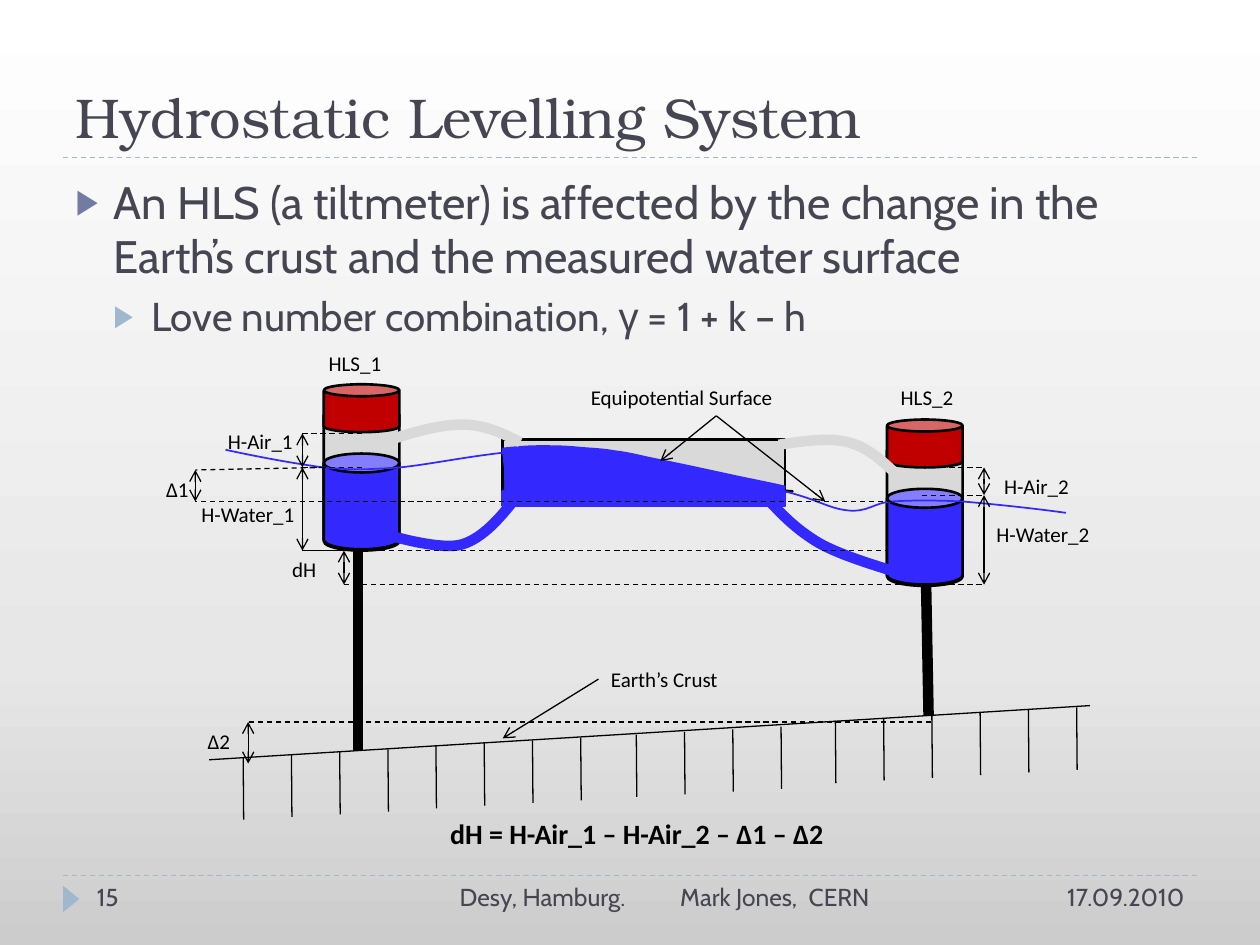
from dataclasses import dataclass

from lxml.etree import SubElement
from pptx import Presentation
from pptx.dml.color import RGBColor
from pptx.enum.dml import MSO_LINE
from pptx.enum.shapes import MSO_CONNECTOR, MSO_SHAPE
from pptx.enum.text import MSO_ANCHOR, MSO_AUTO_SIZE, PP_ALIGN
from pptx.oxml.ns import qn
from pptx.util import Inches, Pt

COLORS = {
    "ink": "464653", "black": "000000", "rule": "9FB8CD", "bullet": "727CA3",
    "water": "3329FF", "air": "D9D9D9", "sensor": "C00000",
    "floor": "CCCCCC", "haze": "E7E7E7", "sky": "FFFFFF",
}
CELL = 0.1


@dataclass
class Box:
    left: float
    top: float

    def point(self, column, row):
        return Inches((self.left + column) * CELL), Inches((self.top + row) * CELL)

    def frame(self, column, row, columns, rows):
        return *self.point(column, row), Inches(columns * CELL), Inches(rows * CELL)


def rgb(name):
    return RGBColor.from_string(COLORS[name])


def style_font(font, size, family="Calibri", color="black", bold=False):
    font.size, font.name, font.bold = Pt(size), family, bold
    font.color.rgb = rgb(color)


def add_solid(shapes, preset, frame, fill, outline=None):
    solid = shapes.add_shape(preset, *frame)
    solid.shadow.inherit = False
    solid.fill.solid()
    solid.fill.fore_color.rgb = rgb(fill)
    if outline:
        solid.line.color.rgb = rgb(outline)
        solid.line.width = Pt(1.5)
    else:
        solid.line.fill.background()
    return solid


def add_line(shapes, box, start, end, width=0.75, color="black", dashed=False, heads=()):
    line = shapes.add_connector(MSO_CONNECTOR.STRAIGHT, *box.point(*start), *box.point(*end))
    line.line.color.rgb = rgb(color)
    line.line.width = Pt(width)
    if dashed:
        line.line.dash_style = MSO_LINE.DASH
    outline = line.line._get_or_add_ln()
    for head in heads:
        SubElement(outline, qn(f"a:{head}"), type="arrow")
    SubElement(line._element.spPr, qn("a:effectLst"))
    return line


def add_measure(shapes, box, column, top, bottom):
    add_line(shapes, box, (column, top), (column, bottom), heads=("headEnd", "tailEnd"))


def add_curve(shapes, box, start, segments, color, width, straight=()):
    vertices = [vertex for segment in segments for vertex in segment] + list(straight)
    builder = shapes.build_freeform(*box.point(*start))
    builder.add_line_segments([box.point(*vertex) for vertex in vertices], close=False)
    curve = builder.convert_to_shape()
    edges = list(curve._element.iter(qn("a:lnTo")))
    for index in range(0, 3 * len(segments), 3):
        bezier = edges[index].makeelement(qn("a:cubicBezTo"))
        edges[index].addprevious(bezier)
        for edge in edges[index:index + 3]:
            bezier.append(edge[0])
            edge.getparent().remove(edge)
    curve.shadow.inherit = False
    curve.fill.background()
    curve.line.color.rgb = rgb(color)
    curve.line.width = Pt(width)


def add_text(shapes, box, text, columns, rows=3, size=12, family="Calibri",
             color="black", bold=False, align=PP_ALIGN.LEFT):
    caption = shapes.add_textbox(*box.frame(0, 0, columns, rows))
    caption.text_frame.word_wrap = True
    paragraph = caption.text_frame.paragraphs[0]
    paragraph.text = text
    paragraph.alignment = align
    style_font(paragraph.font, size, family, color, bold)
    return caption


def paint_background(slide):
    fill = slide.background.fill
    fill.gradient()
    fill.gradient_angle = 90
    stops = slide._element.find(".//" + qn("a:gsLst"))
    stops.clear()
    for position, name in ((0, "floor"), (30000, "haze"), (100000, "sky")):
        stop = SubElement(stops, qn("a:gs"), pos=str(position))
        SubElement(stop, qn("a:srgbClr"), val=COLORS[name])


def place_title(slide, box):
    title = slide.shapes.title
    title.left, title.top, title.width, title.height = box.frame(0, 0, 90, 10.8)
    title.text_frame.text = "Hydrostatic Levelling System"
    title.text_frame.vertical_anchor = MSO_ANCHOR.BOTTOM
    title.text_frame.auto_size = MSO_AUTO_SIZE.NONE
    heading = title.text_frame.paragraphs[0]
    heading.alignment = PP_ALIGN.LEFT
    style_font(heading.font, 32, "TeX Gyre Bonum", "ink")
    add_line(slide.shapes, box, (0, 10.9), (90, 10.9), color="rule", dashed=True)


def add_bullet(paragraph, level, color, space):
    paragraph.level = level
    paragraph.space_before = Pt(space)
    properties = paragraph._p.get_or_add_pPr()
    properties.set("marL", str(Inches(0.3 * (level + 1))))
    properties.set("indent", str(-Inches(0.3)))
    bullet_color = SubElement(properties, qn("a:buClr"))
    SubElement(bullet_color, qn("a:srgbClr"), val=COLORS[color])
    SubElement(properties, qn("a:buSzPct"), val="76000")
    SubElement(properties, qn("a:buChar"), char="▶")


def place_body(slide, box):
    body = slide.placeholders[1]
    body.left, body.top, body.width, body.height = box.frame(0, 0, 90, 54)
    frame = body.text_frame
    frame.auto_size = MSO_AUTO_SIZE.NONE
    effect = frame.paragraphs[0]
    effect.text = ("An HLS (a tiltmeter) is affected by the change in the "
                   "Earth’s crust and the measured water surface")
    add_bullet(effect, 0, "bullet", 0)
    style_font(effect.font, 26, "Cabin", "ink")
    love = frame.add_paragraph()
    add_bullet(love, 1, "rule", 5)
    for words, family in (("Love number combination, ", "Cabin"), ("γ", "Arial"), (" = 1 + k – h", "Cabin")):
        run = love.add_run()
        run.text = words
        style_font(run.font, 23, family, "ink")


def place_footer(shapes, box):
    add_line(shapes, box, (0, 0), (90, 0), color="rule", dashed=True)
    marker = add_solid(shapes, MSO_SHAPE.ISOSCELES_TRIANGLE, box.frame(-0.4, 1.2, 2.1, 1.3), "rule")
    marker.rotation = 90
    for column, text, columns, align in ((1.7, "15", 21.7, PP_ALIGN.LEFT),
                                         (30.5, "Desy, Hamburg.\tMark Jones,\tCERN", 34.5, PP_ALIGN.LEFT),
                                         (65, "17.09.2010", 25, PP_ALIGN.RIGHT)):
        entry = add_text(shapes, Box(box.left + column, box.top), text, columns, 4, 14, "Cabin", "ink", align=align)
        if "\t" in text:
            properties = entry.text_frame.paragraphs[0]._p.get_or_add_pPr()
            tabs = properties.makeelement(qn("a:tabLst"))
            for stop in (1.75, 2.77):
                SubElement(tabs, qn("a:tab"), pos=str(Inches(stop)), algn="l")
            properties.insert(0, tabs)


def place_gauge(shapes, box, pole_start, pole_end):
    for row, rows, color in ((1.7, 11.5, "air"), (0, 3.8, "sensor"), (5.5, 7.6, "water")):
        add_solid(shapes, MSO_SHAPE.CAN, box.frame(0, row, 6, rows), color, "black")
    add_line(shapes, box, pole_start, pole_end, width=6)


def place_tank(shapes, box):
    add_solid(shapes, MSO_SHAPE.RECTANGLE, box.frame(0, 0, 22.4, 5.2), "air", "black")
    add_solid(shapes, MSO_SHAPE.RIGHT_TRIANGLE, box.frame(0, 2.4, 23, 1.7), "water", "black")
    add_solid(shapes, MSO_SHAPE.RECTANGLE, box.frame(0, 4.1, 22.4, 1.1), "water", "water")
    for column, row in ((0.1, 1.7), (6.5, 2.7), (3.8, 2.2)):
        add_solid(shapes, MSO_SHAPE.RECTANGLE, box.frame(column, row, 9.8, 1.6), "water")
    add_curve(shapes, box, (0, 1.4), [
        ((0.9, 1.3), (1.9, 1.2), (2.9, 1.2)), ((3.9, 1.2), (4.8, 1.2), (5.8, 1.3)),
        ((6.7, 1.4), (7.7, 1.4), (8.8, 1.6)), ((9.8, 1.7), (10.9, 2), (11.9, 2.2)),
        ((12.9, 2.4), (14.8, 2.8), (14.8, 2.8))], "water", 11, [(18.5, 3.6), (21.4, 4.2), (22.3, 4.4)])


def place_hoses(shapes, box):
    for color, start, segments in (
        ("air", (-9.2, 0.1), [((-7.1, -0.6), (-5, -1.2), (-3.2, -1.2)), ((-1.4, -1.2), (0, -0.5), (1.4, 0.2))]),
        ("air", (21.9, 0.4), [((23.9, 0.1), (25.9, -0.2), (27.4, 0.2)), ((29, 0.6), (30, 1.6), (31.1, 2.6))]),
        ("water", (31.2, 10.5), [((29, 9.8), (26.7, 9.1), (25.1, 8.2)), ((23.4, 7.2), (22.2, 6), (21.1, 4.8))]),
        ("water", (0.9, 4.8), [((-0.3, 6.3), (-1.6, 7.8), (-3.2, 8.3)), ((-4.8, 8.8), (-8.6, 7.7), (-8.6, 7.7))]),
    ):
        add_curve(shapes, box, start, segments, color, 6)


def place_equipotential(shapes, box):
    add_curve(shapes, box, (0, 0), [
        ((2.8, 0.6), (5.5, 1.1), (7.8, 1.4)), ((10.1, 1.6), (10.6, 1.6), (13.8, 1.4)),
        ((17, 1.1), (22.3, -0.2), (27.1, 0)), ((32, 0.3), (39.3, 2.2), (43, 3)),
        ((46.7, 3.7), (47.6, 4.6), (49.3, 4.8)), ((51, 5), (51.4, 4.2), (52.9, 4.1)),
        ((54.5, 4), (56.2, 4), (58.5, 4.1)), ((60.8, 4.3), (63.8, 4.6), (66.7, 5))], "water", 1)


def place_ground(shapes, box):
    add_line(shapes, box, (0, 0), (69.9, -4.3))
    for column, row, count in ((2.7, -0.2, 4), (18, -1.1, 4), (33.9, -2, 4), (49.7, -3.1, 6)):
        for index in range(count):
            x, y = column + 3.83 * index, row - 0.21 * index
            add_line(shapes, box, (x, y), (x + 0.04, y + 4.95))


def place_gauge_measures(shapes, box, rows, column):
    for row in rows:
        add_line(shapes, box, (0, row), (4.9, row), dashed=True)
    for top, bottom in zip(rows, rows[1:]):
        add_measure(shapes, box, column, top, bottom)


def place_levels(shapes, box):
    for start, end in (((8.9, 6.6), (54.9, 6.6)), ((11.8, 9.3), (62.5, 9.3)), ((55.3, 2.7), (0, 2.7)),
                       ((10.2, 0), (0, 0.2)), ((58.4, 20.2), (4.2, 20.2))):
        add_line(shapes, box, start, end, dashed=True)
    for column, top, bottom in ((11.8, 6.6, 9.3), (0, 0.2, 2.7), (4.2, 20.2, 23.5)):
        add_measure(shapes, box, column, top, bottom)


def place_labels(shapes, box):
    for text, column, row, columns in (
        ("HLS_1", 12.9, 0, 8.2), ("HLS_2", 58.3, 2.7, 8.2), ("H-Air_1", 4.9, 6.2, 8.2),
        ("H-Water_1", 2.8, 12, 10.6), ("H-Air_2", 66.5, 9.8, 8.2), ("H-Water_2", 65.9, 13.6, 10.2),
        ("dH", 10, 16.4, 4.4), ("Δ1", 0, 10, 5), ("Δ2", 3.3, 30, 5),
    ):
        add_text(shapes, Box(box.left + column, box.top + row), text, columns)
    for text, column, row, columns, site, start, targets in (
        ("Equipotential Surface", 33.7, 2.7, 21.9, 2, (44.6, 5.7), ((40.2, 9.3), (53.3, 12.5))),
        ("Earth’s Crust", 35.3, 25.1, 15.8, 1, (35.3, 26.6), ((27.7, 31.3),)),
    ):
        label = add_text(shapes, Box(box.left + column, box.top + row), text, columns)
        for target in targets:
            add_line(shapes, box, start, target, heads=("tailEnd",)).begin_connect(label, site)
    add_text(shapes, Box(box.left, box.top + 37), "dH = H-Air_1 – H-Air_2 – Δ1 – Δ2", 76.7, 3.7, 16,
             bold=True, align=PP_ALIGN.CENTER)


def main():
    presentation = Presentation()
    presentation.slide_width, presentation.slide_height = Inches(10), Inches(7.5)
    slide = presentation.slides.add_slide(presentation.slide_layouts[1])
    shapes = slide.shapes
    paint_background(slide)
    place_title(slide, Box(5, 1.6))
    place_body(slide, Box(5, 13.3))
    place_footer(shapes, Box(5, 69.5))
    place_gauge(shapes, Box(25.7, 30.5), (2.7, 13.2), (2.7, 29))
    place_gauge(shapes, Box(70.4, 33.3), (3.1, 13.1), (3.3, 23.5))
    place_tank(shapes, Box(39.9, 34.9))
    place_ground(shapes, Box(16.6, 60.3))
    place_equipotential(shapes, Box(17.9, 35.7))
    place_hoses(shapes, Box(39.9, 34.9))
    place_gauge_measures(shapes, Box(24, 34.4), (0, 2.7, 9.3), 0)
    place_gauge_measures(shapes, Box(73.2, 37.1), (0, 2.2, 9.3), 4.9)
    place_levels(shapes, Box(15.5, 37.1))
    place_labels(shapes, Box(12.2, 27.3))
    presentation.save("out.pptx")


if __name__ == "__main__":
    main()
